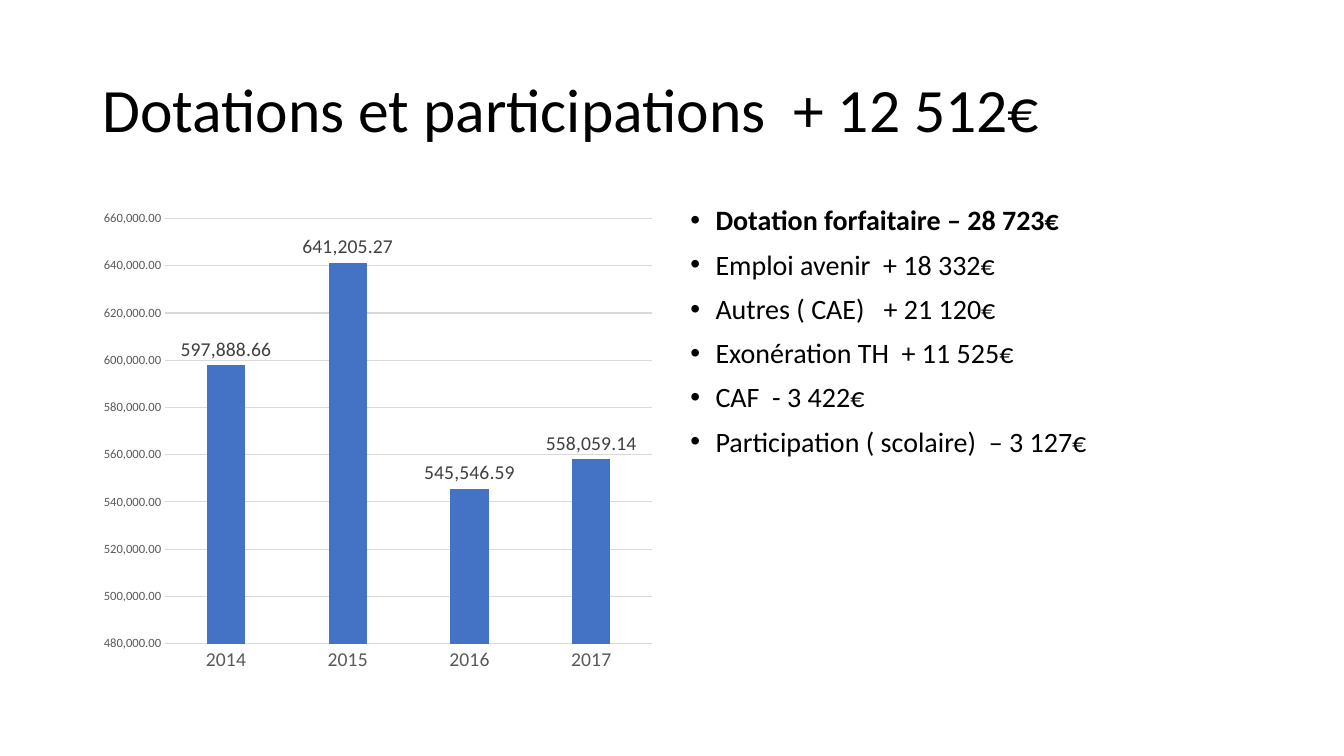
import pptx
import pptx.chart.data
import pptx.dml.color
import pptx.enum.chart
import pptx.enum.text
import pptx.oxml
import pptx.oxml.ns
import pptx.util
from lxml import etree

PX = 9525  # EMU per px, 96 px to the inch
FONT = "Calibri"
COLORS = {
    "text": "000000",
    "bar": "4472C4",
    "label": "404040",
    "axis": "595959",
    "grid": "D9D9D9",
}
TITLE = "Dotations et participations  + 12 512€"
CHANGES = [
    "Dotation forfaitaire – 28 723€",
    "Emploi avenir  + 18 332€",
    "Autres ( CAE)   + 21 120€",
    "Exonération TH  + 11 525€",
    "CAF  - 3 422€",
    "Participation ( scolaire)  – 3 127€",
]
TOTALS = {"2014": 597888.66, "2015": 641205.27, "2016": 545546.59, "2017": 558059.14}


def emu(box):
    return [length * PX for length in box]


def color(name):
    return pptx.dml.color.RGBColor.from_string(COLORS[name])


def style_font(font, size, color_name, bold=False):
    font.name = FONT
    font.size = pptx.util.Pt(size)
    font.bold = bold
    font.color.rgb = color(color_name)


def style_line(line):
    line.color.rgb = color("grid")
    line.width = pptx.util.Pt(0.75)


def add_frame(page, box):
    frame = page.shapes.add_textbox(*emu(box)).text_frame
    frame.word_wrap = True
    return frame


def add_bullet(para):
    properties = para._p.get_or_add_pPr()
    properties.set("marL", str(24 * PX))
    properties.set("indent", str(-24 * PX))
    bullet_font = etree.SubElement(properties, pptx.oxml.ns.qn("a:buFont"))
    bullet_font.set("typeface", "Arial")
    bullet = etree.SubElement(properties, pptx.oxml.ns.qn("a:buChar"))
    bullet.set("char", "•")


def add_title(page, box):
    frame = add_frame(page, box)
    frame.vertical_anchor = pptx.enum.text.MSO_ANCHOR.MIDDLE
    frame.text = TITLE
    para = frame.paragraphs[0]
    para.line_spacing = 0.9
    style_font(para.runs[0].font, 44, "text")


def add_changes(page, box):
    frame = add_frame(page, box)
    frame.text = "\n".join(CHANGES)
    for index, para in enumerate(frame.paragraphs):
        para.line_spacing = 0.9
        para.space_before = pptx.util.Pt(10)
        add_bullet(para)
        style_font(para.runs[0].font, 20, "text", bold=index == 0)


def add_totals_chart(page, box):
    data = pptx.chart.data.CategoryChartData(number_format="#,##0.00")
    data.categories = list(TOTALS)
    data.add_series("Series 1", list(TOTALS.values()))
    kind = pptx.enum.chart.XL_CHART_TYPE.COLUMN_CLUSTERED
    chart = page.shapes.add_chart(kind, *emu(box), data).chart
    chart.has_title = False
    chart.has_legend = False
    style_font(chart.font, 10, "text")

    # Axes
    no_tick = pptx.enum.chart.XL_TICK_MARK.NONE
    for axis, size in ((chart.category_axis, 14), (chart.value_axis, 9)):
        axis.major_tick_mark = no_tick
        axis.minor_tick_mark = no_tick
        style_font(axis.tick_labels.font, size, "axis")
    style_line(chart.category_axis.format.line)
    values = chart.value_axis
    values.minimum_scale, values.maximum_scale = 480000, 660000
    values.major_unit = 20000
    values.format.line.fill.background()
    style_line(values.major_gridlines.format.line)
    values.tick_labels.number_format = "#,##0.00"
    values.tick_labels.number_format_is_linked = False

    # Columns and their labels
    plot = chart.plots[0]
    plot.vary_by_categories = False
    plot.gap_width = 219
    plot.overlap = -27
    series = plot.series[0]
    series.format.fill.solid()
    series.format.fill.fore_color.rgb = color("bar")
    labels = series.data_labels
    labels.show_value = True
    labels.position = pptx.enum.chart.XL_LABEL_POSITION.OUTSIDE_END
    style_font(labels.font, 14, "label")


def main():
    deck = pptx.Presentation()
    deck.slide_width, deck.slide_height = emu((1280, 720))
    page = deck.slides.add_slide(deck.slide_layouts[6])
    add_title(page, (88, 38, 1104, 139))
    add_changes(page, (648, 192, 544, 457))
    add_totals_chart(page, (88, 192, 544, 457))
    deck.save("out.pptx")


if __name__ == "__main__":
    main()
